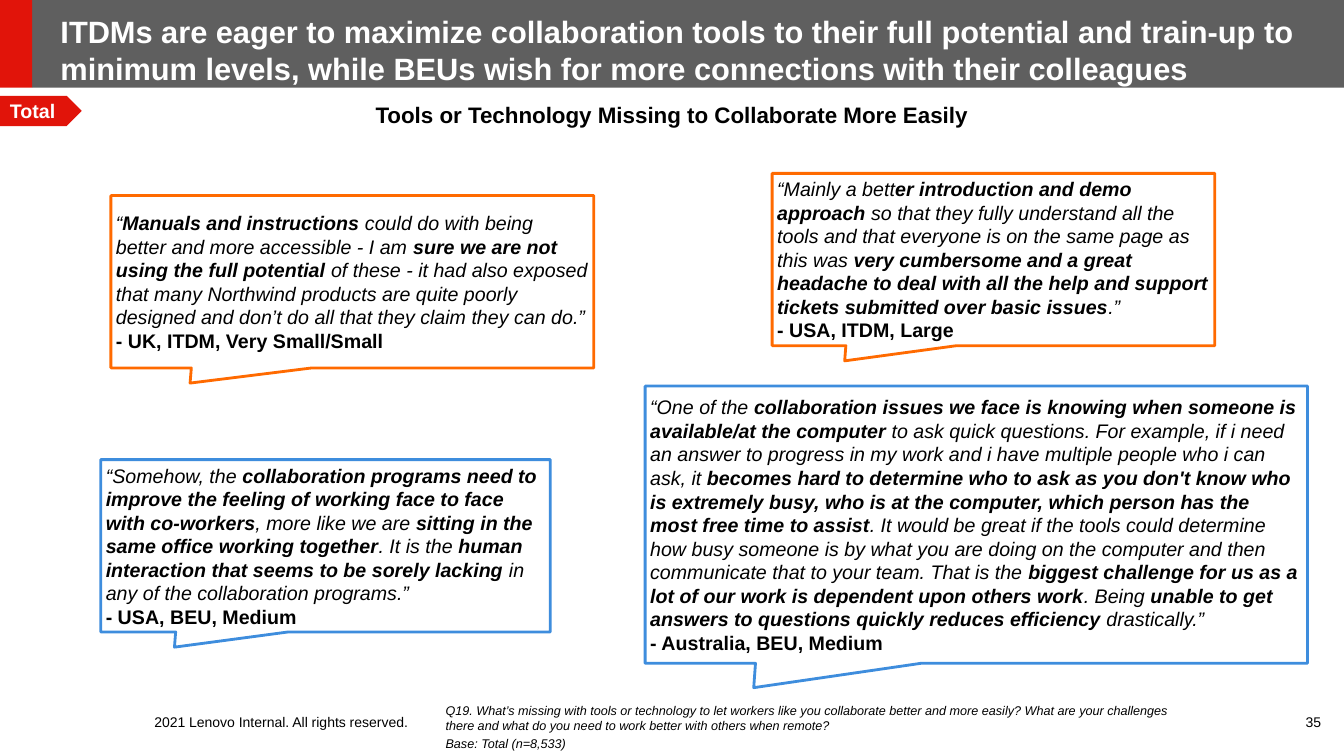
from dataclasses import dataclass
from typing import Any, NamedTuple

from lxml.etree import SubElement
from pptx import Presentation
from pptx.dml.color import RGBColor
from pptx.enum.shapes import MSO_SHAPE
from pptx.enum.text import MSO_ANCHOR, MSO_AUTO_SIZE, PP_ALIGN
from pptx.oxml.ns import qn
from pptx.util import Inches, Pt


@dataclass(frozen=True)
class Theme:
    font: str = "Arial"
    black: str = "000000"
    white: str = "FFFFFF"
    gray: str = "5F5F5F"
    red: str = "E1140A"
    orange: str = "FF6A00"
    blue: str = "3E8DDD"
    title: float = 22
    heading: float = 16
    body: float = 14
    footer: float = 10
    note: float = 9
    outline: float = 2


class Area(NamedTuple):
    """Left, top, width and height in percent of the slide's size."""
    left: float
    top: float
    width: float
    height: float


@dataclass(frozen=True)
class Quote:
    area: Area
    color: str
    words: str  # ** switches bold on and off
    speaker: str


THEME = Theme()
WIDTH, HEIGHT = Inches(13.33), Inches(7.5)
TAIL = (-33.6, 58.8)  # callout tip, percent of the callout's size from its centre
MARGINS = ("margin_left", "margin_top", "margin_right", "margin_bottom")

QUOTES = (
    Quote(Area(8.25, 25.87, 35.93, 22.8), THEME.orange,
          "“**Manuals and instructions **could do with being better and more accessible - I am "
          "**sure we are not using the full potential **of these - it had also exposed that many "
          "Northwind products are quite poorly designed and don’t do all that they claim they "
          "can do.”",
          "- UK, ITDM, Very Small/Small"),
    Quote(Area(57.45, 22.93, 32.93, 22.8), THEME.orange,
          "“Mainly a bett**er introduction and demo approach **so that they fully understand all "
          "the tools and that everyone is on the same page as this was **very cumbersome and a "
          "great headache to deal with all the help and support tickets submitted over basic "
          "issues**.”",
          "- USA, ITDM, Large"),
    Quote(Area(7.5, 60.8, 33.45, 22.8), THEME.blue,
          "“Somehow, the **collaboration programs need to improve the feeling of working face to "
          "face with co-workers**, more like we are **sitting in the same office working "
          "together**. It is the **human interaction that seems to be sorely lacking** in any of "
          "the collaboration programs.”",
          "- USA, BEU, Medium"),
    Quote(Area(48, 51.07, 49.28, 36.67), THEME.blue,
          "“One of the **collaboration issues we face is knowing when someone is available/at the "
          "computer **to ask quick questions. For example, if i need an answer to progress in my "
          "work and i have multiple people who i can ask, it **becomes hard to determine who to "
          "ask as you don't know who is extremely busy, who is at the computer, which person has "
          "the most free time to assist**. It would be great if the tools could determine how "
          "busy someone is by what you are doing on the computer and then communicate that to "
          "your team. That is the **biggest challenge for us as a lot of our work is dependent "
          "upon others work**. Being **unable to get answers to questions quickly reduces "
          "efficiency** drastically.”",
          "- Australia, BEU, Medium"),
)


def apply(target: Any, values: dict[str, Any]) -> None:
    for key, value in values.items():
        setattr(target, key, value)


def bounds(area: Area) -> dict[str, int]:
    scales = (WIDTH, HEIGHT, WIDTH, HEIGHT)
    return {key: round(share * scale / 100)
            for key, share, scale in zip(Area._fields, area, scales)}


def set_frame(frame: Any, anchor: Any, inset: float | None = None) -> None:
    apply(frame, {"word_wrap": True, "auto_size": MSO_AUTO_SIZE.NONE, "vertical_anchor": anchor})
    if inset is not None:
        apply(frame, dict.fromkeys(MARGINS, Inches(inset)))


def write(paragraph: Any, words: str, size: float, color: str = THEME.black,
          bold: bool = False, italic: bool = False) -> None:
    """Write words into a paragraph, switching weight at each **."""
    for index, part in enumerate(words.split("**")):
        if part:
            run = paragraph.add_run()
            run.text = part
            apply(run.font, {"name": THEME.font, "size": Pt(size), "italic": italic,
                             "bold": bold != bool(index % 2)})
            run.font.color.rgb = RGBColor.from_string(color)


def add_block(slide: Any, kind: Any, area: Area, fill: str | None, line: str | None = None) -> Any:
    block = slide.shapes.add_shape(kind, **bounds(area))
    block.shadow.inherit = False
    if fill:
        block.fill.solid()
        block.fill.fore_color.rgb = RGBColor.from_string(fill)
    else:
        block.fill.background()
    if line:
        block.line.color.rgb = RGBColor.from_string(line)
        block.line.width = Pt(THEME.outline)
    else:
        block.line.fill.background()
    return block


def add_label(slide: Any, area: Area, words: str, size: float, align: Any, anchor: Any,
              inset: float | None = None, bold: bool = False) -> None:
    label = slide.shapes.add_textbox(**bounds(area))
    set_frame(label.text_frame, anchor, inset)
    paragraph = label.text_frame.paragraphs[0]
    paragraph.alignment = align
    write(paragraph, words, size, bold=bold)


def add_quote(slide: Any, quote: Quote) -> None:
    callout = add_block(slide, MSO_SHAPE.RECTANGULAR_CALLOUT, quote.area, None, quote.color)
    for index, share in enumerate(TAIL):
        callout.adjustments[index] = share / 100
    frame = callout.text_frame
    set_frame(frame, MSO_ANCHOR.MIDDLE, 0.05)
    words, speaker = frame.paragraphs[0], frame.add_paragraph()
    words.alignment = speaker.alignment = PP_ALIGN.LEFT
    write(words, quote.words, THEME.body, italic=True)
    write(speaker, quote.speaker, THEME.body, bold=True)


def fill_title(title: Any) -> None:
    apply(title, bounds(Area(4.5, 2.4, 93.23, 8.27)))
    set_frame(title.text_frame, MSO_ANCHOR.MIDDLE, 0)
    paragraph = title.text_frame.paragraphs[0]
    paragraph.alignment = PP_ALIGN.LEFT
    write(paragraph, "ITDMs are eager to maximize collaboration tools to their full potential and "
          "train-up to minimum levels, while BEUs wish for more connections with their colleagues",
          THEME.title, THEME.white, bold=True)


def fill_footnote(footnote: Any) -> None:
    apply(footnote, bounds(Area(32.4, 91.73, 55.43, 8.27)))
    frame = footnote.text_frame
    set_frame(frame, MSO_ANCHOR.BOTTOM)
    question, base = frame.paragraphs[0], frame.add_paragraph()
    for paragraph, space in ((question, 0), (base, 0.2 * THEME.note)):
        paragraph.space_before = Pt(space)
        properties = paragraph._p.get_or_add_pPr()
        properties.set("marL", "0")
        properties.set("indent", "0")
        SubElement(properties, qn("a:buNone"))
    write(question, "Q19. What’s missing with tools or technology to let workers like you "
          "collaborate better and more easily? What are your challenges there and what do you "
          "need to work better with others when remote?", THEME.note, italic=True)
    write(base, "Base: Total (n=8,533)", THEME.note, italic=True)


def main() -> None:
    deck = Presentation()
    apply(deck, {"slide_width": WIDTH, "slide_height": HEIGHT})
    slide = deck.slides.add_slide(deck.slide_layouts[1])
    title, footnote = slide.placeholders

    # Header band, placed behind the title
    for area, color in ((Area(2.4, 0, 97.6, 11.6), THEME.gray),
                        (Area(0, 0, 2.4, 11.6), THEME.red)):
        band = add_block(slide, MSO_SHAPE.RECTANGLE, area, color)
        title.element.addprevious(band.element)
    fill_title(title)

    # Heading and audience tag
    add_label(slide, Area(20.33, 12.67, 59.33, 4.93),
              "Tools or Technology Missing to Collaborate More Easily", THEME.heading,
              PP_ALIGN.CENTER, MSO_ANCHOR.TOP, bold=True)
    audience = add_block(slide, MSO_SHAPE.PENTAGON, Area(0, 12.67, 6.08, 4), THEME.red)
    set_frame(audience.text_frame, MSO_ANCHOR.MIDDLE)
    audience.text_frame.paragraphs[0].alignment = PP_ALIGN.LEFT
    write(audience.text_frame.paragraphs[0], "Total", THEME.body, THEME.white, bold=True)

    # Quotes
    for quote in QUOTES:
        add_quote(slide, quote)

    # Footer
    fill_footnote(footnote)
    for area, words, align in (
            (Area(11.48, 94.4, 19.8, 2.27), "2021 Lenovo Internal. All rights reserved.",
             PP_ALIGN.LEFT),
            (Area(95.93, 94.4, 3.6, 2.27), "35", PP_ALIGN.CENTER)):
        add_label(slide, area, words, THEME.footer, align, MSO_ANCHOR.MIDDLE, 0)

    deck.save("out.pptx")


if __name__ == "__main__":
    main()
